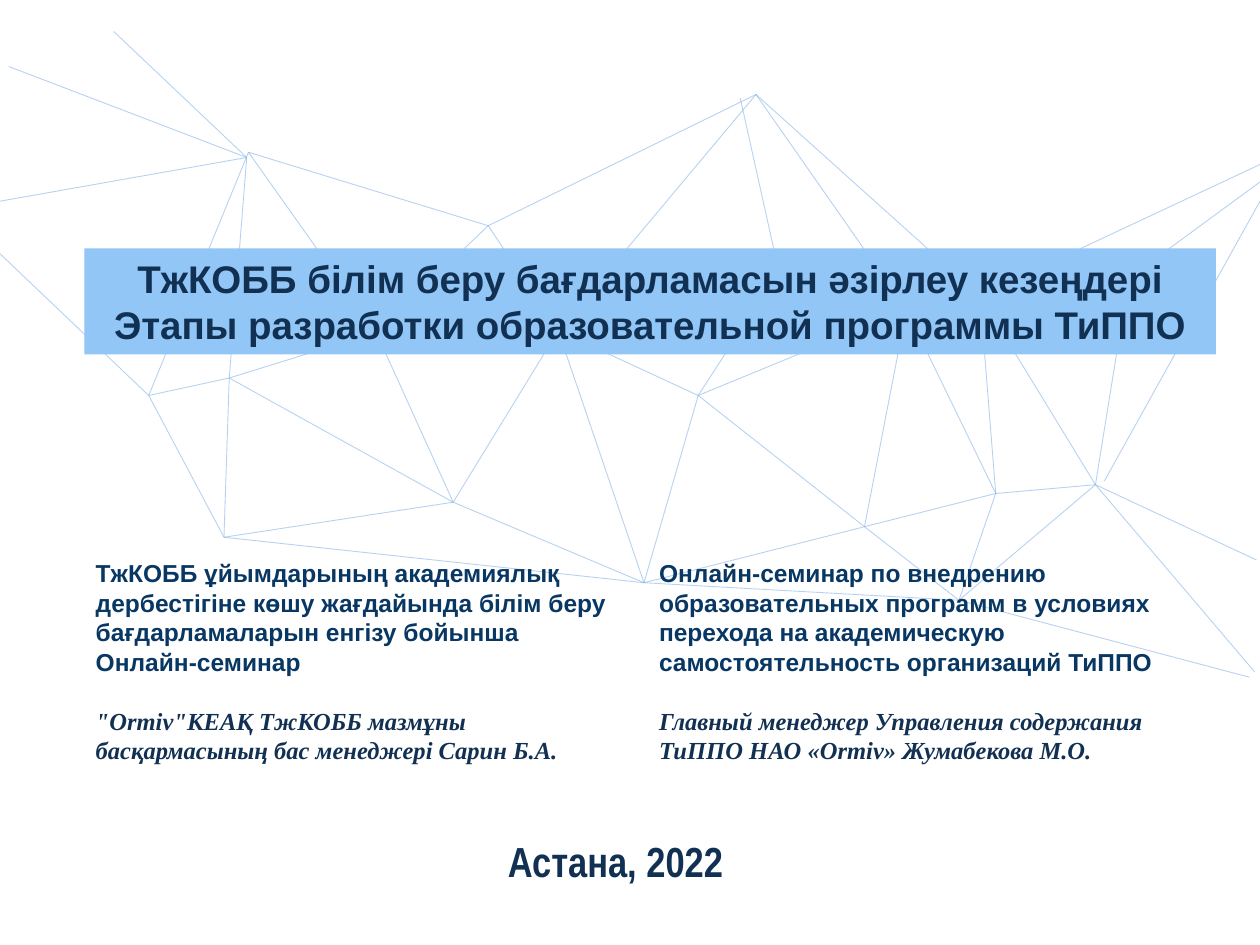
"""Build the opening slide of a seminar on education programmes."""
from dataclasses import dataclass

from lxml.etree import SubElement
from pptx import Presentation
from pptx.dml.color import RGBColor
from pptx.enum.shapes import MSO_CONNECTOR
from pptx.enum.text import MSO_ANCHOR, MSO_AUTO_SIZE, PP_ALIGN
from pptx.oxml.ns import qn
from pptx.util import Pt

NAVY = RGBColor(0x11, 0x30, 0x52)
BLUE = RGBColor(0x08, 0x37, 0x63)
BAND = RGBColor(0x91, 0xC6, 0xF7)
MESH = RGBColor(0x82, 0xB1, 0xE5)

NODES = {
    "a": (65, 18), "b": (5, 38), "c": (0, 115), "d": (141, 90), "e": (142, 87),
    "f": (85, 226), "g": (131, 216), "h": (279, 129), "i": (128, 307),
    "j": (259, 287), "k": (368, 333), "l": (399, 226), "m": (432, 54),
    "n": (494, 301), "o": (569, 282), "p": (626, 277), "q": (548, 343),
    "r": (0, 145), "s": (215, 190), "t": (319, 189), "u": (518, 177),
    "v": (560, 169), "w": (645, 159), "x": (445, 155), "y": (423, 56),
    "z": (631, 275), "A": (720, 94), "B": (720, 104), "C": (720, 115),
    "D": (717, 384), "E": (718, 320), "F": (714, 387),
}
EDGES = (
    "ad bd cd ef rf dg fg es gs eh sh gi fi gj js ij ht jt kt jk ik kl lt "
    "hm mt xl mu lu mv nu ln kn ou ov no kq nq oq vA wB zC wp vp op pq "
    "pD pE qF yx"
).split()


@dataclass
class Style:
    font: str
    size: float
    color: RGBColor
    slant: bool = False


@dataclass
class Box:
    left: float
    top: float
    width: float
    height: float


@dataclass
class Column:
    box: Box
    theme: str
    speaker: str


HEAD = Style("Arial", 22, NAVY)
THEME = Style("Arial", 14, BLUE)
SPEAKER = Style("Times New Roman", 14, NAVY, True)
PLACE = Style("Arial Narrow", 24, NAVY)

TITLE = (
    "ТжКОББ білім беру бағдарламасын әзірлеу кезеңдері",
    "Этапы разработки образовательной программы ТиППО",
)
COLUMNS = (
    Column(
        Box(47.5, 315.4, 311, 126),
        "ТжКОББ ұйымдарының академиялық дербестігіне көшу жағдайында "
        "білім беру бағдарламаларын енгізу бойынша Онлайн-семинар",
        '"Ormiv"КЕАҚ ТжКОББ мазмұны басқармасының бас менеджері Сарин Б.А.',
    ),
    Column(
        Box(369.4, 315.4, 303, 131),
        "Онлайн-семинар по внедрению образовательных программ в условиях "
        "перехода на академическую самостоятельность организаций ТиППО",
        "Главный менеджер Управления содержания ТиППО НАО «Ormiv» "
        "Жумабекова М.О.",
    ),
)


def place(shape, box: Box) -> None:
    """Move and size a shape."""
    shape.left, shape.top = Pt(box.left), Pt(box.top)
    shape.width, shape.height = Pt(box.width), Pt(box.height)


def write(shape, lines: list[tuple[str, Style]], align: PP_ALIGN,
          anchor: MSO_ANCHOR, gap: float = 0) -> None:
    """Fill a shape with one styled run per paragraph."""
    frame = shape.text_frame
    frame.word_wrap = True
    frame.auto_size = MSO_AUTO_SIZE.NONE
    frame.vertical_anchor = anchor
    for rank, (text, style) in enumerate(lines):
        para = frame.add_paragraph() if rank else frame.paragraphs[0]
        para.alignment = align
        para.line_spacing = 1.0
        para.space_before = Pt(gap if rank else 0)
        para.space_after = Pt(0)
        run = para.add_run()
        run.text = text
        font = run.font
        font.name, font.size = style.font, Pt(style.size)
        font.bold, font.italic = True, style.slant
        font.color.rgb = style.color


def strip(shape) -> None:
    """Take bullets and indents off a list."""
    for para in shape.text_frame.paragraphs:
        props = para._p.get_or_add_pPr()
        props.set("marL", "0")
        props.set("indent", "0")
        SubElement(props, qn("a:buNone"))


def draw_mesh(slide) -> None:
    """Draw the mesh behind all the text."""
    group = slide.shapes.add_group_shape()
    for start, end in EDGES:
        points = [Pt(n) for n in NODES[start] + NODES[end]]
        line = group.shapes.add_connector(MSO_CONNECTOR.STRAIGHT, *points)
        line.line.width = Pt(0.5)
        line.line.color.rgb = MESH
        color = next(line.element.iter(qn("a:srgbClr")))
        SubElement(color, qn("a:alpha"), val="56000")
        SubElement(line.element.spPr, qn("a:effectLst"))
    slide.shapes.element.insert(2, group.element)


def main() -> None:
    """Build and save the deck."""
    deck = Presentation()
    deck.slide_width, deck.slide_height = Pt(720), Pt(540)
    slide = deck.slides.add_slide(deck.slide_layouts[3])
    draw_mesh(slide)

    title, *bodies = slide.placeholders
    place(title, Box(48.2, 142, 646.6, 60.5))
    title.fill.solid()
    title.fill.fore_color.rgb = BAND
    write(title, [(text, HEAD) for text in TITLE],
          PP_ALIGN.CENTER, MSO_ANCHOR.MIDDLE)

    for body, col in zip(bodies, COLUMNS):
        place(body, col.box)
        write(body, [(col.theme, THEME), (col.speaker, SPEAKER)],
              PP_ALIGN.LEFT, MSO_ANCHOR.TOP, 17)
        strip(body)

    foot = slide.shapes.add_textbox(Pt(229.7), Pt(473.8), Pt(244), Pt(36))
    write(foot, [("Астана, 2022", PLACE)], PP_ALIGN.CENTER, MSO_ANCHOR.TOP)
    deck.save("out.pptx")


if __name__ == "__main__":
    main()
